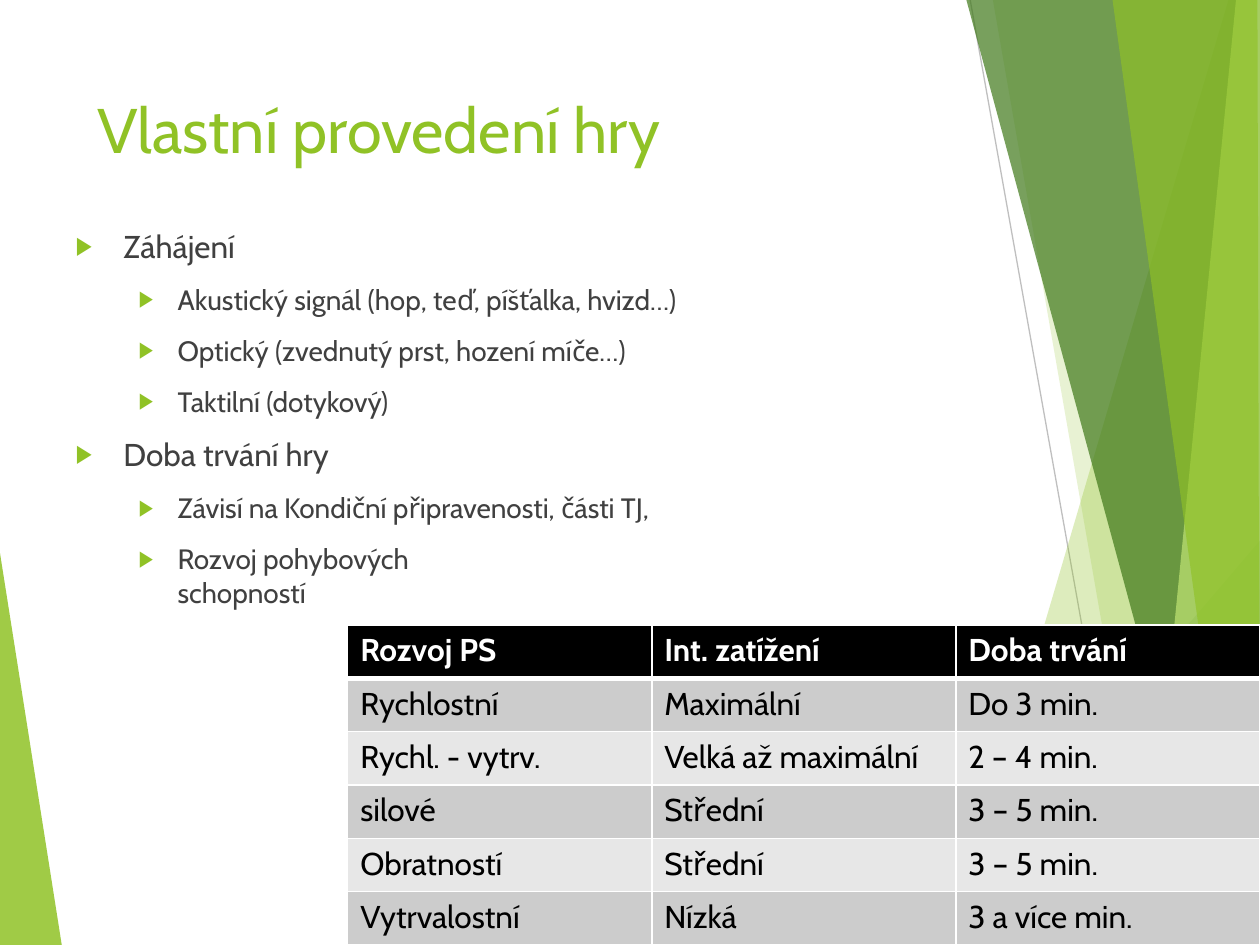
"""Build a slide on running a game, with a bullet list and a load table."""
from copy import deepcopy
from typing import NamedTuple

from lxml.etree import SubElement
from pptx import Presentation
from pptx.dml.color import RGBColor
from pptx.enum.shapes import MSO_CONNECTOR
from pptx.enum.text import MSO_ANCHOR, MSO_AUTO_SIZE, PP_ALIGN
from pptx.oxml.ns import qn
from pptx.util import Inches, Pt

FONT = "Cabin"
WIDE, HIGH = 10, 7.5
HEX = {
    "lime": "90C226", "leaf": "54A021", "pine": "3F7819", "pale": "C0E474",
    "text": "404040", "black": "000000", "white": "FFFFFF",
    "mist": "D9D9D9", "gray": "BFBFBF", "odd": "CCCCCC", "even": "E7E7E7",
}


class Facet(NamedTuple):
    color: str
    alpha: int
    points: list


class Ray(NamedTuple):
    color: str
    start: tuple
    end: tuple


class Item(NamedTuple):
    level: int
    text: str


RAYS = [Ray("mist", (5.61, HIGH), (WIDE, 4.57)), Ray("gray", (7.7, 0), (9.04, HIGH))]
EDGE = [(WIDE, HIGH), (WIDE, 0)]
FACETS = [
    Facet("lime", 85, [(0, 4.39), (0.49, HIGH), (0, HIGH)]),
    Facet("lime", 30, [(9.75, 0), (7.54, HIGH), *EDGE]),
    Facet("lime", 20, [(7.88, 0), (9.19, HIGH), *EDGE]),
    Facet("leaf", 72, [(7.26, HIGH), (WIDE, 4.29), (WIDE, HIGH)]),
    Facet("pine", 70, [(7.67, 0), (9.7, HIGH), *EDGE]),
    Facet("pale", 70, [(9.81, 0), (9.07, HIGH), *EDGE]),
    Facet("lime", 65, [(8.83, 0), (9.86, HIGH), (WIDE, HIGH), (9.98, 0)]),
    Facet("lime", 80, [(8.81, HIGH), (WIDE, 5.35), (WIDE, HIGH)]),
]
ITEMS = [
    Item(0, "Záhájení"),
    Item(1, "Akustický signál (hop, teď, píšťalka, hvizd…)"),
    Item(1, "Optický (zvednutý prst, hození míče…)"),
    Item(1, "Taktilní (dotykový)"),
    Item(0, "Doba trvání hry"),
    Item(1, "Závisí na Kondiční připravenosti, části TJ,"),
    Item(1, "Rozvoj pohybových \vschopností"),
]
ROWS = [
    ("Rozvoj PS", "Int. zatížení", "Doba trvání"),
    ("Rychlostní", "Maximální", "Do 3 min."),
    ("Rychl. - vytrv.", "Velká až maximální", "2 – 4 min."),
    ("silové", "Střední", "3 – 5 min."),
    ("Obratností", "Střední", "3 – 5 min."),
    ("Vytrvalostní", "Nízká", "3 a více min."),
]


def tint(name: str) -> RGBColor:
    """Return a named colour."""
    return RGBColor.from_string(HEX[name])


def write(par, text: str, size: int = 18, color: str = "black", bold: bool = False) -> None:
    """Fill a paragraph with formatted text."""
    par.text = text
    par.alignment = PP_ALIGN.LEFT
    for run in par.runs:
        run.font.name, run.font.size, run.font.bold = FONT, Pt(size), bold
        run.font.color.rgb = tint(color)
    for gap in par._p.findall(qn("a:br")):
        gap.insert(0, deepcopy(par.runs[0]._r.rPr))


def place(shape, left: float, top: float, width: float, height: float):
    """Move a placeholder to the front and return its top-anchored frame."""
    shape.left, shape.top = Inches(left), Inches(top)
    shape.width, shape.height = Inches(width), Inches(height)
    tree = shape._element.getparent()
    tree.append(shape._element)
    frame = shape.text_frame
    frame.auto_size, frame.vertical_anchor = MSO_AUTO_SIZE.NONE, MSO_ANCHOR.TOP
    frame.word_wrap = True
    return frame


def draw_ray(shapes, ray: Ray) -> None:
    """Draw a thin line."""
    ends = [Inches(v) for v in (*ray.start, *ray.end)]
    line = shapes.add_connector(MSO_CONNECTOR.STRAIGHT, *ends)
    line.line.color.rgb, line.line.width = tint(ray.color), Pt(0.75)
    SubElement(line._element.spPr, qn("a:effectLst"))


def draw_facet(shapes, facet: Facet) -> None:
    """Draw a translucent polygon."""
    first, *rest = [(Inches(x), Inches(y)) for x, y in facet.points]
    pen = shapes.build_freeform(*first)
    pen.add_line_segments(rest, close=True)
    shape = pen.convert_to_shape()
    shape.shadow.inherit = False
    shape.line.fill.background()
    shape.fill.solid()
    shape.fill.fore_color.rgb = tint(facet.color)
    tone = shape._element.spPr.find(".//" + qn("a:srgbClr"))
    SubElement(tone, qn("a:alpha"), val=str(facet.alpha * 1000))


def draw_item(par, item: Item) -> None:
    """Write one bulleted paragraph."""
    write(par, item.text, size=18 - 2 * item.level, color="text")
    par.level, par.space_before = item.level, Pt(10)
    left, hang = ((0.38, 0.38), (0.81, 0.31))[item.level]
    props = par._p.get_or_add_pPr()
    props.set("marL", str(Inches(left)))
    props.set("indent", str(-Inches(hang)))
    SubElement(SubElement(props, qn("a:buClr")), qn("a:srgbClr"), val=HEX["lime"])
    SubElement(props, qn("a:buSzPct"), val="80000")
    SubElement(props, qn("a:buChar"), char="▶")


def draw_cell(cell, text: str, row: int) -> None:
    """Fill and border one table cell."""
    head = row == 0
    write(cell.text_frame.paragraphs[0], text, color="white" if head else "black", bold=head)
    props = cell._tc.get_or_add_tcPr()
    for side in "LRTB":
        thick = 3 if (row, side) in ((0, "B"), (1, "T")) else 1
        edge = SubElement(props, qn(f"a:ln{side}"), w=str(Pt(thick)))
        SubElement(SubElement(edge, qn("a:solidFill")), qn("a:srgbClr"), val=HEX["white"])
    cell.fill.solid()
    cell.fill.fore_color.rgb = tint("black" if head else ("even", "odd")[row % 2])


def draw_table(shapes) -> None:
    """Draw the load table."""
    box = [Inches(v) for v in (2.76, 4.96, 7.24, 2.54)]
    table = shapes.add_table(len(ROWS), len(ROWS[0]), *box).table
    for r, row in enumerate(ROWS):
        for c, text in enumerate(row):
            draw_cell(table.cell(r, c), text, r)


def main() -> None:
    """Build and save the slide."""
    deck = Presentation()
    deck.slide_width, deck.slide_height = Inches(WIDE), Inches(HIGH)
    slide = deck.slides.add_slide(deck.slide_layouts[1])
    shapes = slide.shapes
    draw_facet(shapes, FACETS[0])
    for ray in RAYS:
        draw_ray(shapes, ray)
    for facet in FACETS[1:]:
        draw_facet(shapes, facet)
    title = place(shapes.title, 0.67, 0.67, 6.94, 1.44)
    write(title.paragraphs[0], "Vlastní provedení hry", size=36, color="lime")
    body = place(slide.placeholders[1], 0.5, 1.75, 9, 3.33)
    for i, item in enumerate(ITEMS):
        draw_item(body.add_paragraph() if i else body.paragraphs[0], item)
    draw_table(shapes)
    deck.save("out.pptx")


if __name__ == "__main__":
    main()
